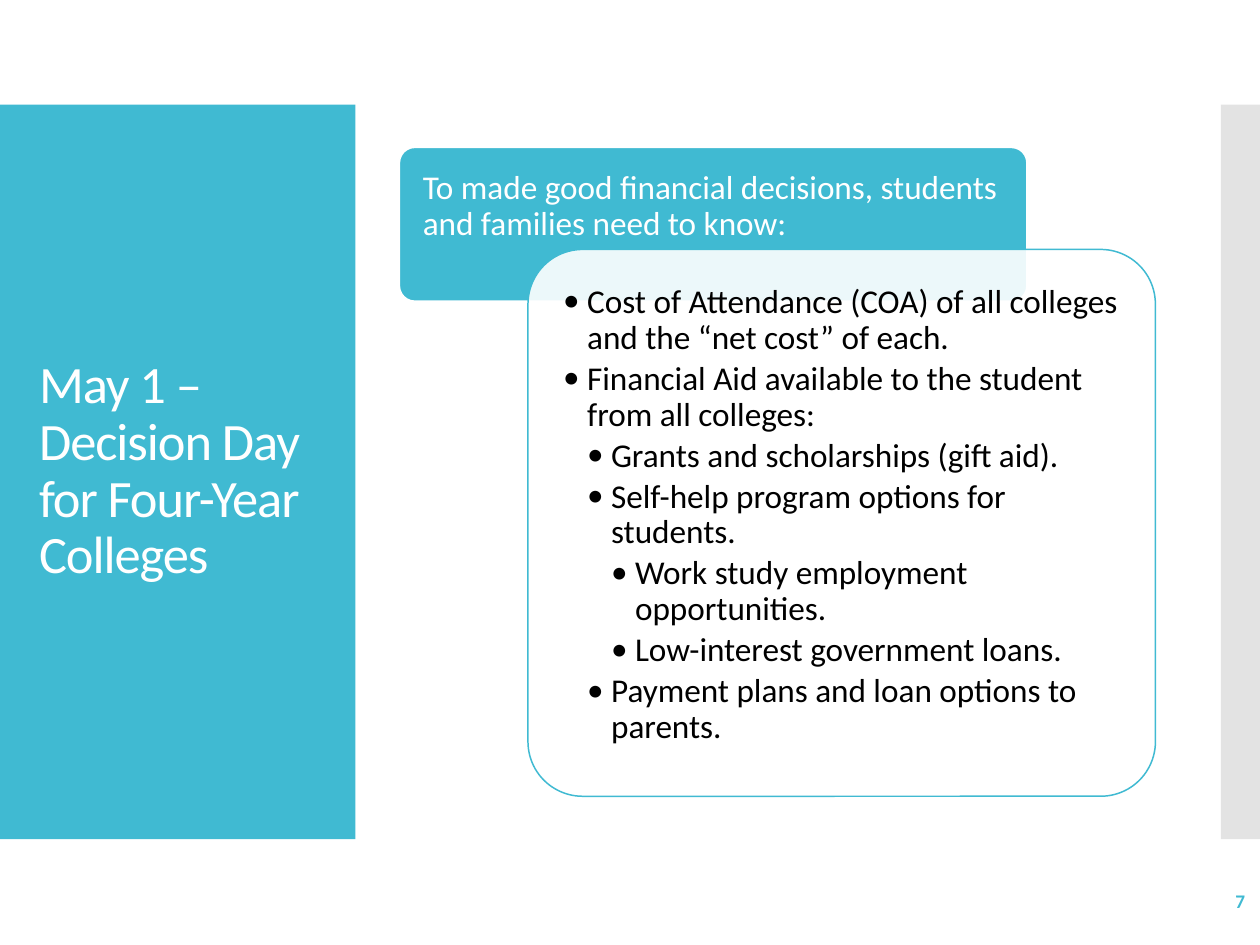
import pptx
import pptx.dml.color
import pptx.enum.shapes
import pptx.enum.text
import pptx.oxml.ns
import pptx.util
from dataclasses import dataclass
from lxml import etree
from pptx.util import Inches


@dataclass(frozen=True)
class Theme:
    font: str = "Calibri"
    accent: str = "40BAD2"
    light: str = "FFFFFF"
    dark: str = "000000"
    edge: str = "C8C8C8"
    title_size: int = 30
    text_size: int = 19
    number_size: int = 11


theme = Theme()
qn = pptx.oxml.ns.qn
RGBColor = pptx.dml.color.RGBColor
MSO_SHAPE = pptx.enum.shapes.MSO_SHAPE
MSO_ANCHOR = pptx.enum.text.MSO_ANCHOR
PP_ALIGN = pptx.enum.text.PP_ALIGN


def add_panel(kind, box, fill, line=None, opacity=100):
    """Add a filled shape; opacity is a percentage."""
    shape = slide.shapes.add_shape(kind, *map(Inches, box))
    shape.shadow.inherit = False
    shape.fill.solid()
    shape.fill.fore_color.rgb = RGBColor.from_string(fill)
    if opacity < 100:
        color = shape.fill._xPr.find(".//" + qn("a:srgbClr"))
        etree.SubElement(color, qn("a:alpha")).set("val", str(opacity * 1000))
    if line:
        shape.line.color.rgb = RGBColor.from_string(line)
        shape.line.width = pptx.util.Pt(0.85)
    else:
        shape.line.fill.background()
    if kind == MSO_SHAPE.ROUNDED_RECTANGLE:
        shape.adjustments[0] = 0.1
    return shape


def format_paragraph(paragraph, size, color, align=PP_ALIGN.LEFT, spacing=0.9):
    paragraph.alignment = align
    paragraph.line_spacing = spacing
    paragraph.space_before = pptx.util.Pt(0)
    paragraph.font.name = theme.font
    paragraph.font.size = pptx.util.Pt(size)
    paragraph.font.color.rgb = RGBColor.from_string(color)


presentation = pptx.Presentation()
presentation.slide_width = Inches(10)
presentation.slide_height = Inches(7.5)
slide = presentation.slides.add_slide(presentation.slide_layouts[1])
title, body = slide.placeholders

# Side bands and the two overlapping cards
add_panel(MSO_SHAPE.RECTANGLE, (0, 0.83, 2.82, 5.83), theme.accent)
add_panel(MSO_SHAPE.RECTANGLE, (9.69, 0.83, 0.31, 5.83), theme.edge, opacity=50)
header = add_panel(MSO_SHAPE.ROUNDED_RECTANGLE, (3.17, 1.17, 4.98, 1.22),
                   theme.accent, theme.light)
add_panel(MSO_SHAPE.ROUNDED_RECTANGLE, (4.19, 1.98, 4.98, 4.34),
          theme.light, theme.accent, opacity=90)

# Placeholders go in front of the panels
for placeholder, box in ((title, (0.21, 1.23, 2.42, 5.03)),
                         (body, (4.32, 2.11, 4.73, 4.08))):
    slide.shapes._spTree.append(placeholder._element)
    placeholder.left, placeholder.top, placeholder.width, placeholder.height = map(Inches, box)
    placeholder.text_frame.auto_size = pptx.enum.text.MSO_AUTO_SIZE.NONE
    placeholder.text_frame.word_wrap = True

title.text_frame.text = "May 1 – Decision Day for Four-Year Colleges"
title.text_frame.vertical_anchor = MSO_ANCHOR.MIDDLE
title_paragraph = title.text_frame.paragraphs[0]
format_paragraph(title_paragraph, theme.title_size, theme.light)
title_paragraph.runs[0]._r.get_or_add_rPr().set("spc", "-60")

header.text_frame.text = "To made good financial decisions, students and families need to know:"
format_paragraph(header.text_frame.paragraphs[0], theme.text_size, theme.light)

for frame in (header.text_frame, body.text_frame):
    frame.vertical_anchor = MSO_ANCHOR.TOP
    frame.margin_left = frame.margin_right = Inches(0.15)
    frame.margin_top = frame.margin_bottom = Inches(0.15)

needs = [
    (1, "Cost of Attendance (COA) of all colleges and the “net cost” of each."),
    (1, "Financial Aid available to the student from all colleges:"),
    (2, "Grants and scholarships (gift aid)."),
    (2, "Self-help program options for students."),
    (3, "Work study employment opportunities."),
    (3, "Low-interest government loans."),
    (2, "Payment plans and loan options to parents."),
]
indent = Inches(0.19)
for index, (level, text) in enumerate(needs):
    paragraph = body.text_frame.add_paragraph() if index else body.text_frame.paragraphs[0]
    paragraph.text = text
    paragraph.level = level - 1
    properties = paragraph._p.get_or_add_pPr()
    properties.set("marL", str(level * indent))
    properties.set("indent", str(-indent))
    etree.SubElement(properties, qn("a:buFont")).set("typeface", theme.font)
    etree.SubElement(properties, qn("a:buChar")).set("char", "•")
    format_paragraph(paragraph, theme.text_size, theme.dark)
    paragraph.space_after = pptx.util.Pt(theme.text_size * 0.15)

page_number = slide.shapes.add_textbox(Inches(8.72), Inches(6.95), Inches(1.26), Inches(0.4))
page_number.text_frame.word_wrap = True
page_number.text_frame.vertical_anchor = MSO_ANCHOR.MIDDLE
page_number.text_frame.text = "7"
number_paragraph = page_number.text_frame.paragraphs[0]
format_paragraph(number_paragraph, theme.number_size, theme.accent, PP_ALIGN.RIGHT, 1.0)
number_paragraph.font.bold = True

presentation.save("out.pptx")
